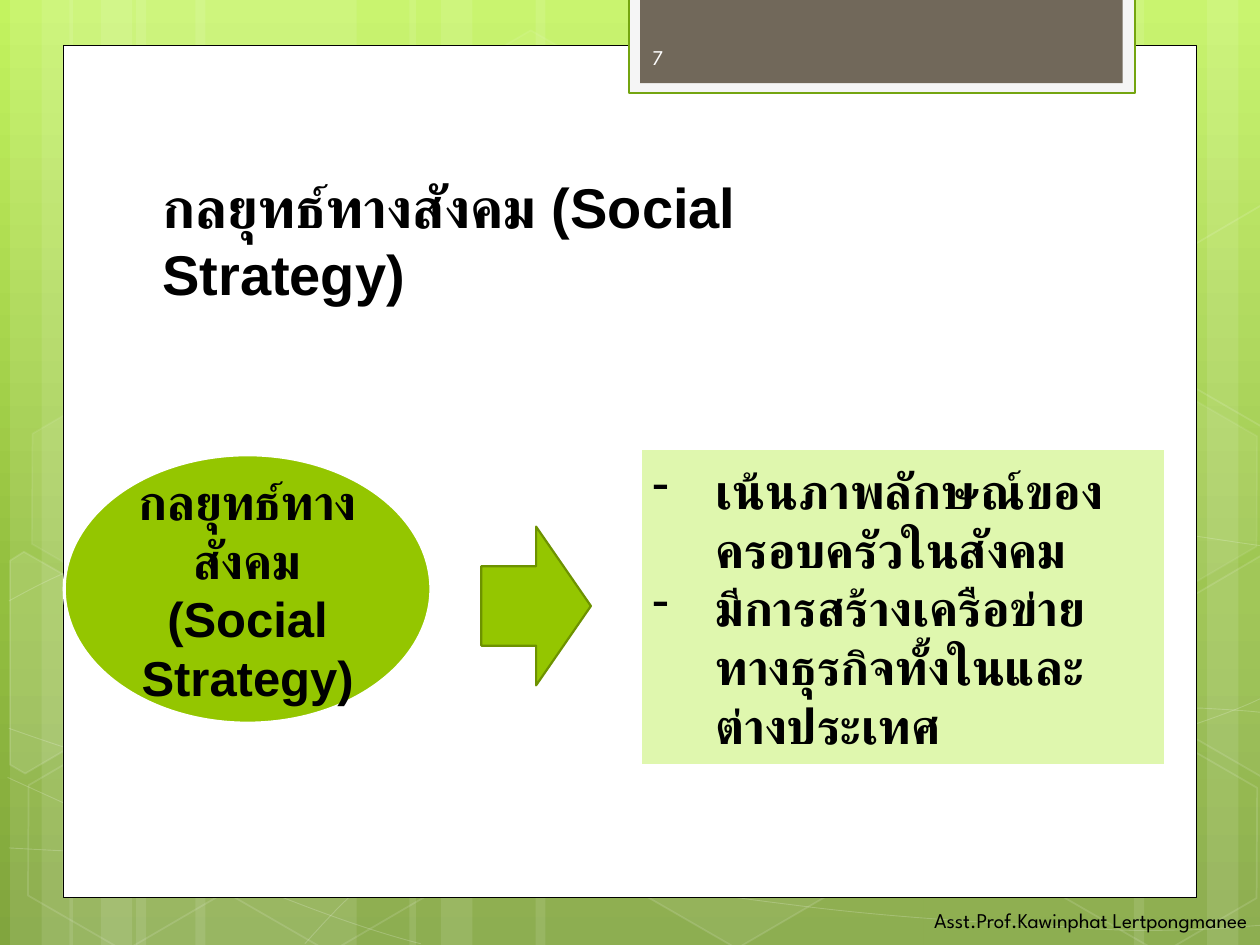
from copy import deepcopy

from lxml.etree import SubElement
from pptx import Presentation
from pptx.dml.color import RGBColor
from pptx.enum.lang import MSO_LANGUAGE_ID
from pptx.enum.shapes import MSO_SHAPE
from pptx.enum.text import MSO_ANCHOR, PP_ALIGN
from pptx.oxml.ns import qn
from pptx.util import Inches, Pt

WHITE, BLACK, GREEN = "FFFFFF", "000000", "94C600"
HEADING_FONT, BODY_FONT = "League Spartan", "Arial"

SKY = [(0, "C3F35F"), (0.62, "93BF3F"), (1, "81A53E")]
STRIPES = [  # left, width
    (1.08, 1.75), (0.08, 0.5), (0.33, 0.83), (1.55, 1.75), (0.55, 0.5), (0.8, 0.83),
    (7.33, 1.75), (9.58, 0.5), (9, 0.83), (4.25, 3.08), (3.25, 0.5), (3.5, 0.83),
]
# Start point, then segments: three points make a Bezier curve, one point a straight line
CURVES = [
    ((0.07, 6.73), [
        [(0.61, 6.76), (1.15, 6.79), (1.9, 6.78)], [(2.65, 6.77), (3.58, 6.75), (4.58, 6.65)],
        [(5.58, 6.55), (7, 6.36), (7.92, 6.17)], [(8.83, 5.98), (9.77, 5.68), (10.07, 5.51)]]),
    ((0.07, 4.77), [
        [(0.36, 4.61), (0.65, 4.46), (1.21, 4.31)], [(1.78, 4.16), (2.59, 3.94), (3.47, 3.87)],
        [(4.36, 3.8), (5.44, 3.79), (6.54, 3.87)], [(7.64, 3.95), (9.47, 4.26), (10.07, 4.34)]]),
    ((0.06, 6.17), [[(1.27, 6.72), (2.47, 7.27), (3.34, 7.49)]]),
    ((0.07, 5.78), [
        [(0.38, 5.89), (0.7, 6), (1.28, 6.16)], [(1.86, 6.31), (2.73, 6.56), (3.57, 6.73)],
        [(4.4, 6.9), (5.45, 7.08), (6.28, 7.18)], [(7.11, 7.29), (8, 7.33), (8.53, 7.36)],
        [(9.05, 7.4), (9.19, 7.38), (9.45, 7.38)], [(9.71, 7.37), (9.89, 7.35), (10.07, 7.34)]]),
    ((2.42, 7.49), [
        [(2.6, 7.29), (2.78, 7.09), (3.02, 6.91)], [(3.26, 6.73), (3.6, 6.53), (3.88, 6.39)],
        [(4.16, 6.25), (4.33, 6.19), (4.7, 6.09)], [(5.06, 5.99), (5.73, 5.85), (6.08, 5.78)],
        [(6.44, 5.71), (6.49, 5.71), (6.8, 5.69)], [(7.11, 5.66), (7.6, 5.63), (7.94, 5.62)],
        [(8.29, 5.61), (8.86, 5.62), (8.86, 5.62)], [(9.53, 5.62)],
        [(9.71, 5.63), (9.88, 5.64), (9.97, 5.65)], [(10.06, 5.66), (10.03, 5.65), (10.06, 5.66)]]),
]
HEXAGONS = [  # left, top, fill opacity, line opacity
    (3.34, 0.36, 4, 8), (4.97, 5.89, 6, 12), (0.11, 5.91, None, 12),
    (0.14, 3.12, 7, 8), (1.74, 5.92, None, 12), (7.53, 4.53, 10, 12),
    (8.34, 5.93, None, 12), (8.34, 3.14, 7, 8),
]
CUT_HEXAGONS = [  # corners, fill opacity
    ([(0.08, 4.45), (0.19, 4.38), (0.96, 4.82), (0.95, 5.7), (0.2, 6.14), (0.08, 6.07)], 10),
    ([(9.26, 4.85), (10.01, 4.41), (10.09, 4.46), (10.09, 6.13), (10.02, 6.17),
      (9.26, 5.73)], 4),
    ([(9.26, 2.07), (10.01, 1.63), (10.1, 1.68), (10.09, 3.35), (10.02, 3.39),
      (9.26, 2.95)], None),
]

TITLE = "กลยุทธ์ทางสังคม (Social Strategy)"
STRATEGY = ["กลยุทธ์ทางสังคม", "(Social Strategy)"]
POINTS = ["เน้นภาพลักษณ์ของครอบครัวในสังคม",
          "มีการสร้างเครือข่ายทางธุรกิจทั้งในและต่างประเทศ"]
AUTHOR = "Asst.Prof.Kawinphat Lertpongmanee"
PAGE_NUMBER = "7"


def rgb(color):
    return RGBColor.from_string(color)


def paint(fill, color, opacity=100):
    """Solid fill with opacity in percent; no fill when color or opacity is None."""
    if color is None or opacity is None:
        fill.background()
        return
    fill.solid()
    fill.fore_color.rgb = rgb(color)
    if opacity < 100:
        node = fill._xPr.find(qn("a:solidFill"))[0]
        SubElement(node, qn("a:alpha")).set("val", str(opacity * 1000))


def style(shape, fill, fill_opacity=100, line=None, width=1, line_opacity=100):
    shape.shadow.inherit = False
    paint(shape.fill, fill, fill_opacity)
    paint(shape.line.fill, line, line_opacity)
    if line:
        shape.line.width = Pt(width)
    return shape


def add_preset(page, preset, at, fill, **look):
    return style(page.shapes.add_shape(preset, *map(Inches, at)), fill, **look)


def add_outline(page, points, close):
    corners = [(Inches(x), Inches(y)) for x, y in points]
    builder = page.shapes.build_freeform(*corners[0])
    builder.add_line_segments(corners[1:], close=close)
    return builder.convert_to_shape()


def add_curve(page, start, segments):
    """Lay out all points as lines, then join each group of three into a Bezier."""
    shape = add_outline(page, [start] + sum(segments, []), False)
    lines = iter(list(shape._element.iter(qn("a:lnTo"))))
    for segment in segments:
        first, *others = [next(lines) for _ in segment]
        if others:
            first.tag = qn("a:cubicBezTo")
            for other in others:
                first.append(other[0])
                other.getparent().remove(other)
    return shape


def write(shape, lines, size, font, color=BLACK, bold=False, align=PP_ALIGN.LEFT,
          anchor=MSO_ANCHOR.MIDDLE, margin=0, indent=0, bullet=None, before=0):
    frame = shape.text_frame
    frame.word_wrap = True
    frame.vertical_anchor = anchor
    for i, line in enumerate(lines):
        para = frame.paragraphs[0] if i == 0 else frame.add_paragraph()
        para.alignment = align
        para.space_before = Pt(before)
        props = para._p.get_or_add_pPr()
        props.set("marL", str(Inches(margin)))
        props.set("indent", str(Inches(indent)))
        if bullet:
            SubElement(props, qn("a:buFontTx"))
            SubElement(props, qn("a:buChar")).set("char", bullet)
        span = para.add_run()
        span.text = line
        span.font.size = Pt(size)
        span.font.name = font
        span.font.bold = bold
        span.font.color.rgb = rgb(color)
        span.font.language_id = MSO_LANGUAGE_ID.THAI
        SubElement(span._r.get_or_add_rPr(), qn("a:cs")).set("typeface", font)


def add_text(page, at, lines, size, font, **look):
    box = page.shapes.add_textbox(*map(Inches, at))
    write(box, lines, size, font, **look)


def add_backdrop(page):
    fill = page.background.fill
    fill.gradient()
    fill.gradient_angle = 270
    stop_list = next(page.element.iter(qn("a:gsLst")))
    stop_list.append(deepcopy(stop_list[0]))
    for stop, (position, color) in zip(fill.gradient_stops, SKY):
        stop.position = position
        stop.color.rgb = rgb(color)
    for left, width in STRIPES:
        add_preset(page, MSO_SHAPE.RECTANGLE, (left, 0, width, 7.5), WHITE, fill_opacity=10)
    for start, segments in CURVES:
        style(add_curve(page, start, segments), None, line=WHITE, width=0.5, line_opacity=20)
    for left, top, opacity, line_opacity in HEXAGONS:
        hexagon = add_preset(page, MSO_SHAPE.HEXAGON, (left, top, 1.75, 1.52), WHITE,
                             fill_opacity=opacity, line=WHITE, line_opacity=line_opacity)
        hexagon.adjustments[0] = 0.285
        hexagon.rotation = 30
    for corners, opacity in CUT_HEXAGONS:
        style(add_outline(page, corners, True), WHITE, opacity, WHITE, 1, 12)


def main():
    deck = Presentation()
    deck.slide_width, deck.slide_height = Inches(10), Inches(7.5)
    page = deck.slides.add_slide(deck.slide_layouts[6])
    add_backdrop(page)

    add_preset(page, MSO_SHAPE.RECTANGLE, (0.5, 0.36, 9, 6.76), WHITE, line=BLACK, width=0.5)
    add_preset(page, MSO_SHAPE.RECTANGLE, (4.99, -0.02, 4.02, 0.76), "F5F5F5",
               line="74A510", width=1.25)
    add_preset(page, MSO_SHAPE.RECTANGLE, (5.08, -0.02, 3.83, 0.68), "71685A")
    add_text(page, (6.17, 7.1, 3.83, 0.4), [AUTHOR], 12, HEADING_FONT, align=PP_ALIGN.RIGHT)
    add_text(page, (5.08, 0.25, 1.46, 0.4), [PAGE_NUMBER], 12, HEADING_FONT, color="FEFEFE")

    strategy = add_preset(page, MSO_SHAPE.OVAL, (0.51, 3.61, 2.91, 2.13), GREEN,
                          line=WHITE, width=1.75)
    write(strategy, STRATEGY, 28, BODY_FONT, bold=True, align=PP_ALIGN.CENTER)
    details = add_preset(page, MSO_SHAPE.RECTANGLE, (5.08, 3.56, 4.17, 2.52), "DFF7AE",
                         line=WHITE, width=1.75)
    write(details, POINTS, 28, BODY_FONT, bold=True, margin=0.5, indent=-0.5, bullet="-")
    add_preset(page, MSO_SHAPE.RIGHT_ARROW, (3.82, 4.18, 0.87, 1.26), GREEN,
               line="6D9200", width=1.25)
    add_text(page, (1.12, 1.32, 5, 1.29), [TITLE], 32, BODY_FONT, bold=True,
             anchor=MSO_ANCHOR.TOP, margin=0.07, before=6.4)

    deck.save("out.pptx")


if __name__ == "__main__":
    main()
